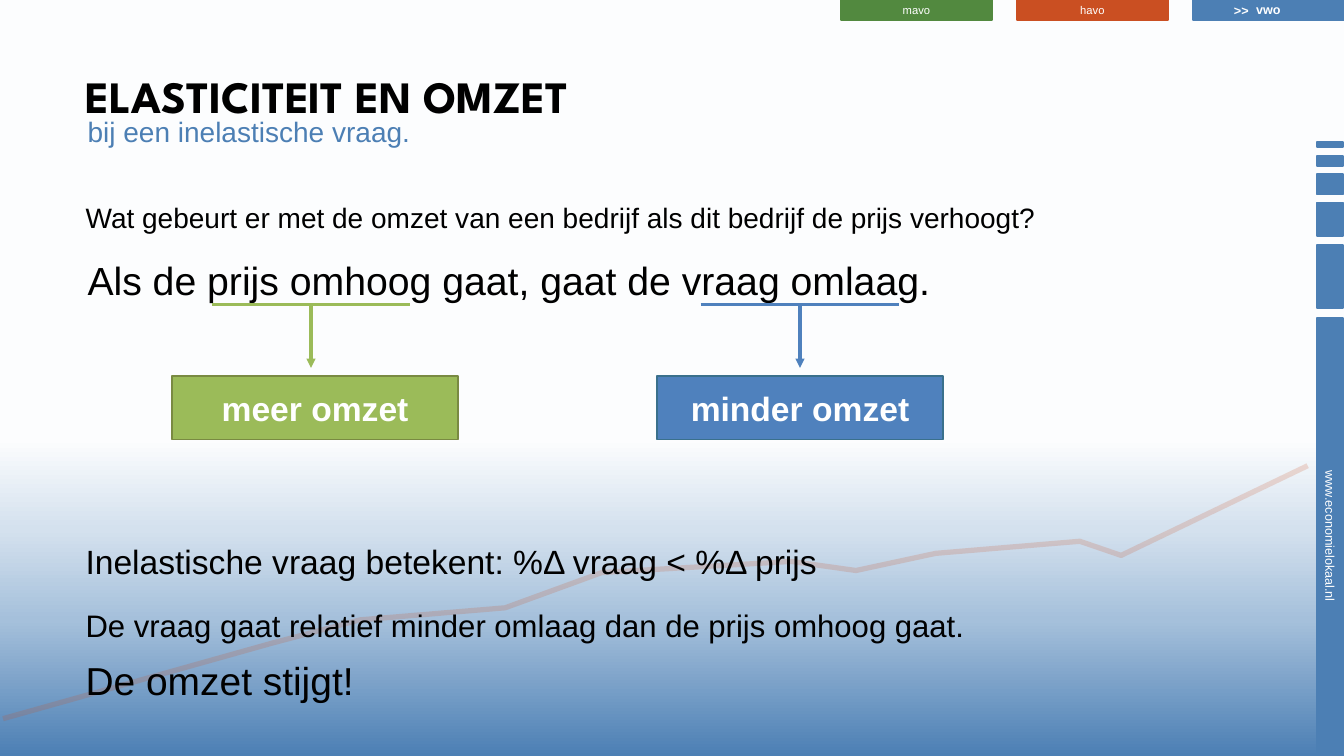
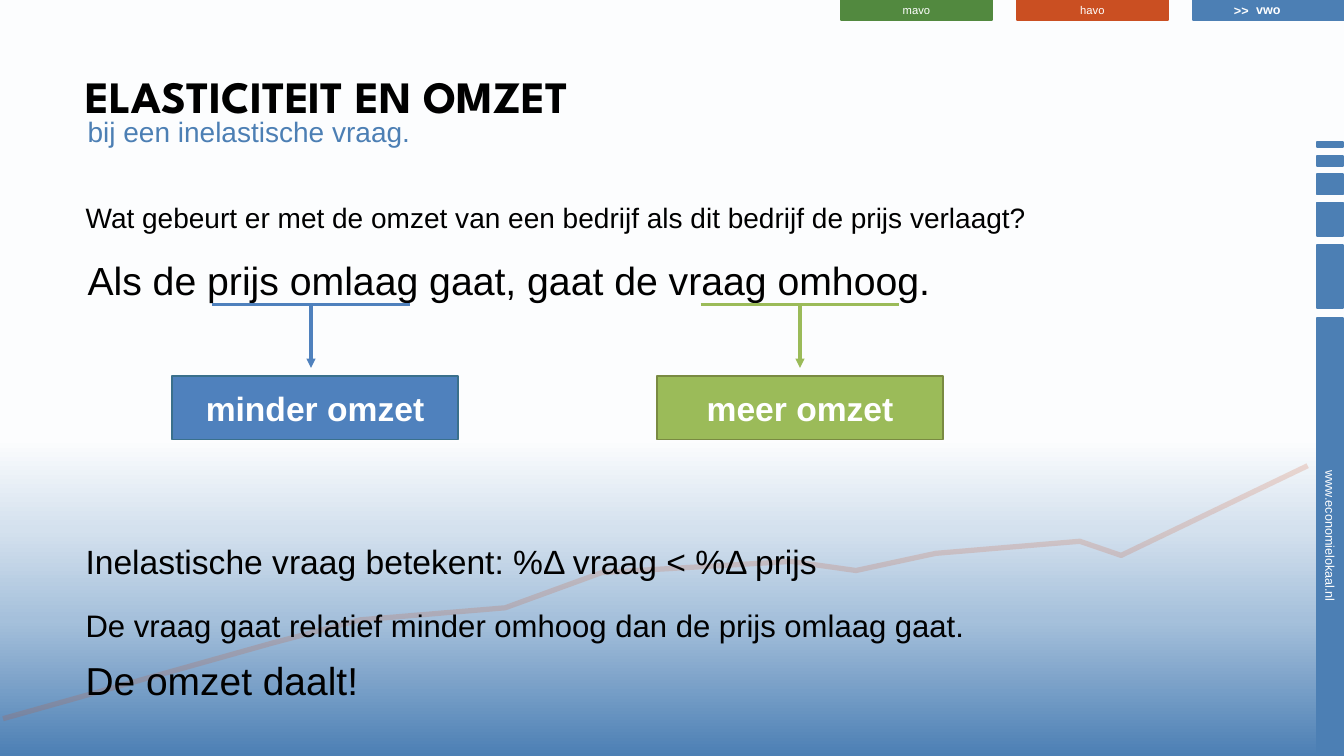
from lxml.etree import SubElement
from pptx import Presentation
from pptx.dml.color import RGBColor
from pptx.enum.shapes import MSO_CONNECTOR as CONN, MSO_SHAPE as SHAPE
from pptx.enum.text import MSO_ANCHOR as ANCHOR, MSO_AUTO_SIZE as AUTO, PP_ALIGN as ALIGN
from pptx.oxml.ns import qn
from pptx.util import Inches, Pt

BLUE, GREEN, ORANGE = "4C7FB4", "52893F", "CA4F22"
BLACK, WHITE = "000000", "FFFFFF"
GRADIENT = [(0, BLUE), (18, "A5C0DB"), (30, "D4E1EE"), (42, "FCFDFE"), (50, WHITE)]
BODY_FONT, TITLE_FONT = "Arial", "League Spartan"

# label: (fill, outline)
OUTCOMES = {"meer omzet": ("9BBB59", "798A42"), "minder omzet": ("4F81BD", "3A708C")}
# label, colour, size, bold
TABS = [("mavo", GREEN, 8, False), ("havo", ORANGE, 8, False), ("vwo", BLUE, 9, True)]
# top, height
SIDE_BARS = [(1.41, 0.05), (1.55, 0.1), (1.73, 0.2), (2.01, 0.33), (2.43, 0.63)]
TREND = [(12.97, 4.62), (11.12, 5.51), (10.71, 5.37), (9.28, 5.49), (8.49, 5.66), (7.85, 5.57),
         (5.97, 5.68), (5.01, 6.03), (3.57, 6.15), (2.7, 6.38), (0.03, 7.13)]


def rgb(color):
    return RGBColor.from_string(color)


def box_of(x, y, w, h):
    return Inches(x), Inches(y), Inches(w), Inches(h)


def write(p, text, size=20, color=BLACK, bold=False, font=BODY_FONT, align=ALIGN.LEFT,
          before=0, after=0):
    p.alignment = align
    p.space_before, p.space_after = Pt(before), Pt(after)
    r = p.add_run()
    r.text = text
    r.font.name, r.font.size, r.font.bold = font, Pt(size), bold
    r.font.color.rgb = rgb(color)


def add_text(slide, box, text, wrap=True, **fmt):
    tf = slide.shapes.add_textbox(*box_of(*box)).text_frame
    tf.word_wrap = wrap
    write(tf.paragraphs[0], text, **fmt)
    return tf


def add_rect(slide, box, fill, line=None, text=None, thin=False, **fmt):
    sp = slide.shapes.add_shape(SHAPE.RECTANGLE, *box_of(*box))
    sp.shadow.inherit = False
    sp.fill.solid()
    sp.fill.fore_color.rgb = rgb(fill)
    sp.line.color.rgb = rgb(line or fill)
    sp.line.width = Pt(1.25)
    if text:
        tf = sp.text_frame
        tf.vertical_anchor = ANCHOR.MIDDLE
        if thin:
            tf.margin_top, tf.margin_bottom = 0, Inches(0.01)
        write(tf.paragraphs[0], text, color=WHITE, align=ALIGN.CENTER, **fmt)
    return sp


def add_line(slide, x1, y1, x2, y2, color, arrow=False):
    line = slide.shapes.add_connector(CONN.STRAIGHT, Inches(x1), Inches(y1), Inches(x2), Inches(y2))
    line.line.color.rgb = rgb(color)
    line.line.width = Pt(2.25)
    if arrow:
        SubElement(line.line._get_or_add_ln(), qn("a:tailEnd"), type="triangle")
    SubElement(line._element.spPr, qn("a:effectLst"))


def set_background(master):
    fill = master.background.fill
    fill.gradient()
    fill.gradient_angle = 90
    stops = master._element.find(".//" + qn("a:gsLst"))
    for stop in list(stops):
        stops.remove(stop)
    for pos, color in GRADIENT:
        stop = SubElement(stops, qn("a:gs"), pos=str(pos * 1000))
        SubElement(stop, qn("a:srgbClr"), val=color)


def add_tabs(slide, x=8.34, pitch=1.745):
    for i, (label, color, size, bold) in enumerate(TABS):
        add_rect(slide, (x + i * pitch, 0, 1.5, 0.2), color, text=label, thin=True,
                 size=size, bold=bold)
    add_text(slide, (x + 3.8, -0.02, 0.35, 0.25), ">>", wrap=False, size=9, color=WHITE, bold=True)


def add_side_band(slide, x=13.06, w=0.26):
    for top, height in SIDE_BARS:
        add_rect(slide, (x, top, w, height), BLUE)
    # long bar, turned so that its text reads downwards
    length, middle = 4.33, 5.32
    sp = add_rect(slide, (x + (w - length) / 2, middle - w / 2, length, w), BLUE,
                  text="www.economielokaal.nl", thin=True, size=9)
    sp.rotation = 90


def add_trend(slide):
    points = [(Inches(x), Inches(y)) for x, y in TREND]
    builder = slide.shapes.build_freeform(*points[0])
    builder.add_line_segments(points[1:], close=False)
    sp = builder.convert_to_shape()
    sp.shadow.inherit = False
    sp.fill.background()
    sp.line.color.rgb = rgb(ORANGE)
    sp.line.width = Pt(3.75)
    color = sp.line._get_or_add_ln().find(".//" + qn("a:srgbClr"))
    SubElement(color, qn("a:alpha"), val="19000")


def add_title(slide, title, subtitle):
    sp = slide.shapes.title
    sp.left, sp.top, sp.width, sp.height = box_of(0.75, 0.5, 10.02, 0.89)
    tf = sp.text_frame
    tf.auto_size = AUTO.NONE
    tf.vertical_anchor = ANCHOR.MIDDLE
    write(tf.paragraphs[0], title, size=32, bold=True, font=TITLE_FONT)
    add_text(slide, (0.77, 1.09, 4.46, 0.74), subtitle, color=BLUE)


def add_branch(slide, x, box_x, label, y=3.02):
    """Underline, arrow and outcome box below one part of the sentence."""
    fill, outline = OUTCOMES[label]
    width = 1.97
    add_line(slide, x, y, x + width, y, fill)
    add_line(slide, x + width / 2, y, x + width / 2, y + 0.63, fill, arrow=True)
    add_rect(slide, (box_x, y + 0.71, 2.83, 0.63), fill, outline, label, size=24, bold=True)


def add_conclusion(slide, explanation, result):
    add_text(slide, (0.75, 5.32, 10.95, 0.5), "Inelastische vraag betekent: %Δ vraag < %Δ prijs",
             size=24)
    tf = add_text(slide, (0.75, 5.97, 11.2, 1.04), explanation, size=22.2, after=3.4)
    write(tf.add_paragraph(), result, size=27.8, before=5.6, after=3.4)


def add_revenue_slide(prs, change, price, demand, outcomes, result):
    slide = prs.slides.add_slide(prs.slide_layouts[5])
    add_side_band(slide)
    add_tabs(slide)
    add_trend(slide)
    add_title(slide, "ELASTICITEIT EN OMZET", "bij een inelastische vraag.")
    # question and answer
    add_text(slide, (0.75, 1.94, 10.88, 0.53),
             f"Wat gebeurt er met de omzet van een bedrijf als dit bedrijf de prijs {change}?")
    add_text(slide, (0.75, 2.49, 8.59, 0.71),
             f"Als de prijs {price} gaat, gaat de vraag {demand}.", size=28, align=ALIGN.CENTER)
    # effect of price and of demand
    for (x, box_x), label in zip([(2.1, 1.71), (6.95, 6.52)], outcomes):
        add_branch(slide, x, box_x, label)
    add_conclusion(slide, f"De vraag gaat relatief minder {demand} dan de prijs {price} gaat.",
                   f"De omzet {result}!")


def main():
    prs = Presentation()
    prs.slide_width, prs.slide_height = Inches(13.33), Inches(7.5)
    set_background(prs.slide_master)
    add_revenue_slide(prs, "verhoogt", "omhoog", "omlaag", ["meer omzet", "minder omzet"], "stijgt")
    add_revenue_slide(prs, "verlaagt", "omlaag", "omhoog", ["minder omzet", "meer omzet"], "daalt")
    prs.save("out.pptx")


if __name__ == "__main__":
    main()
